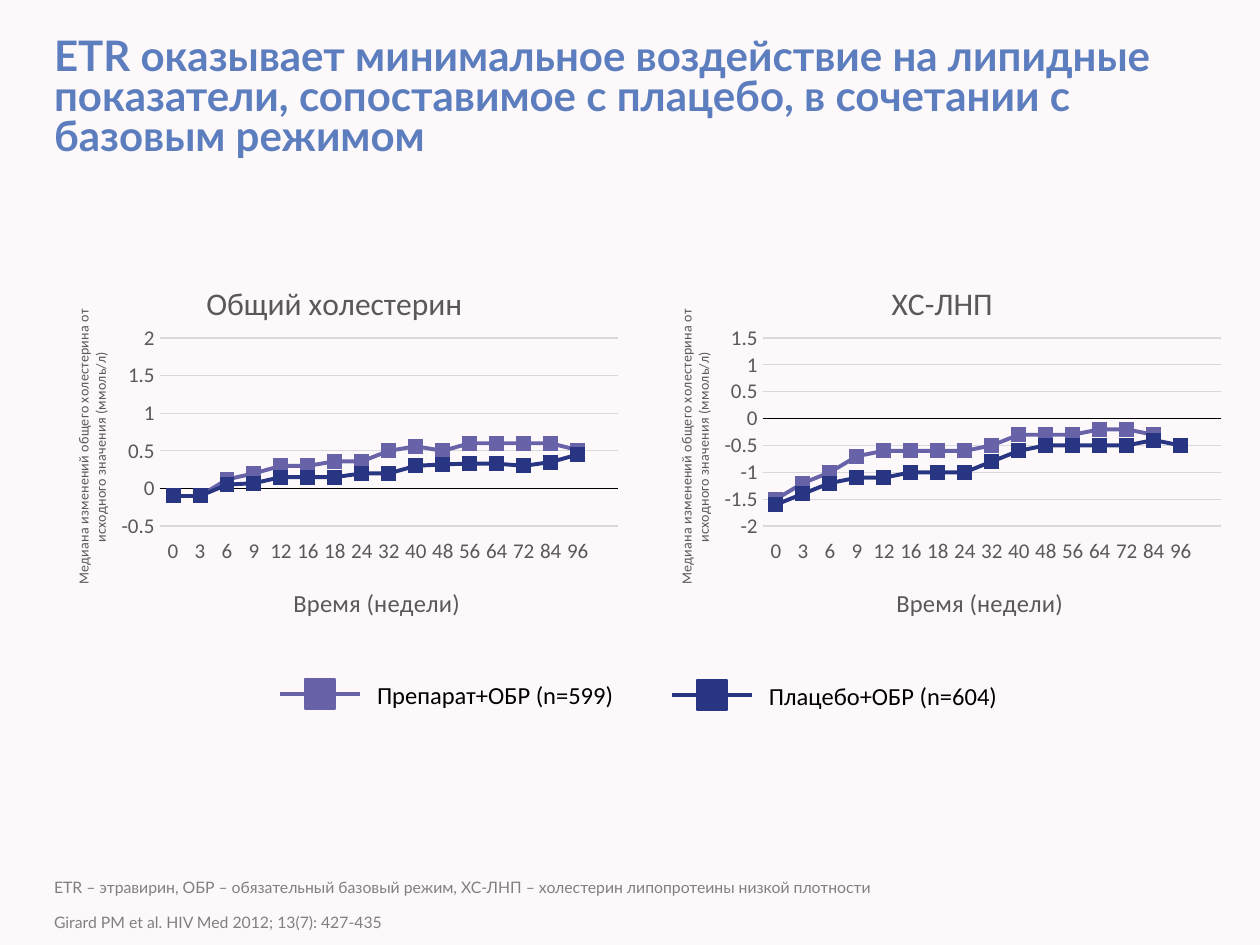
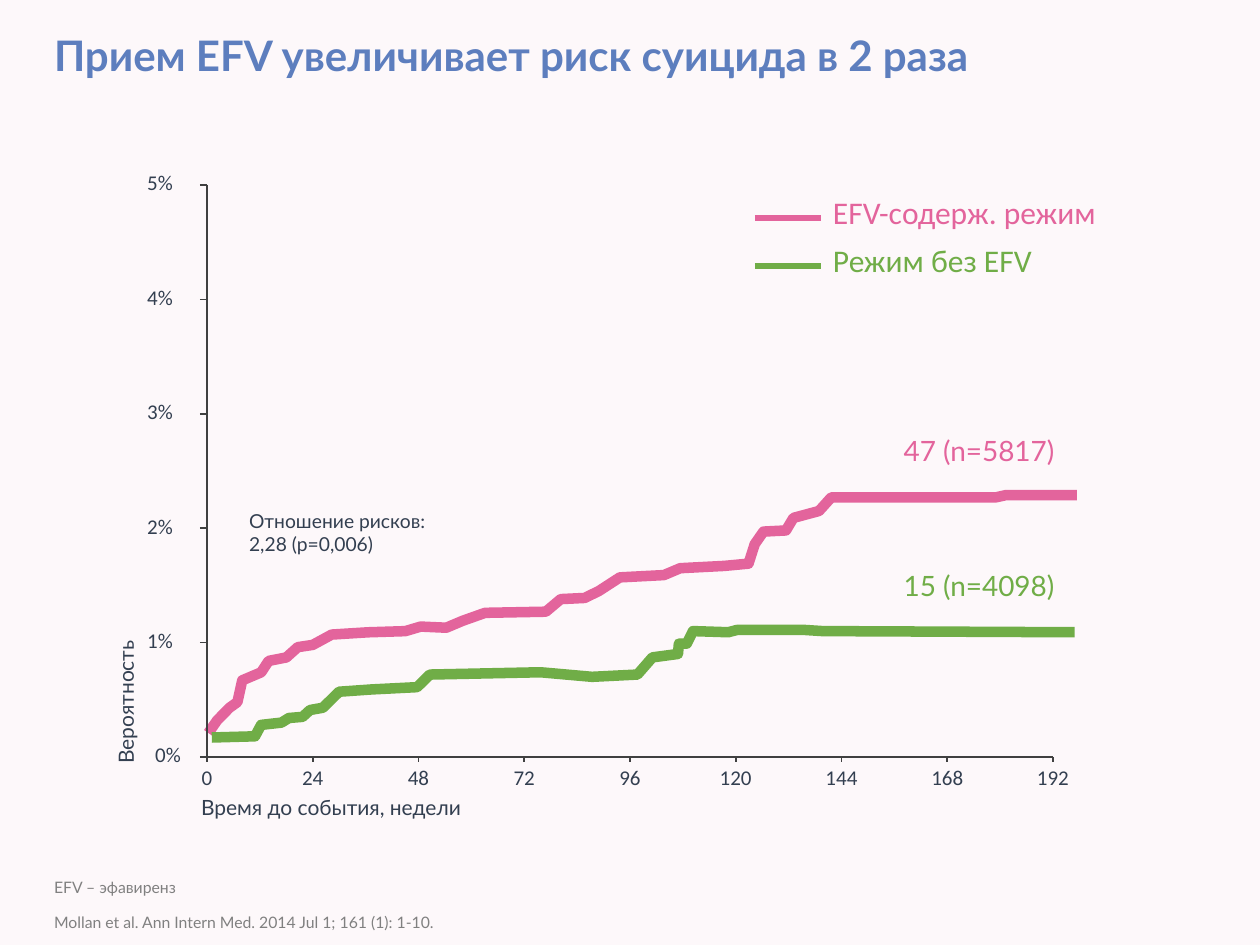
from lxml import etree
from pptx import Presentation
from pptx import util as u
from pptx.chart.data import CategoryChartData
from pptx.dml.color import RGBColor
from pptx.enum import chart as ch, shapes, text
from pptx.oxml.ns import qn

BACK, TITLE, GREY, DARK, BLACK = "FDF8FA", "5D7EBE", "808080", "595959", "000000"
DRUG, DUMMY, GRID = "6863A9", "283583", "D9D9D9"
PINK, GREEN, AXIS, INK = "E3649C", "70AD47", "404040", "333F50"
LATO, CALIBRI = "Lato", "Calibri"
LEFT, MID = text.PP_ALIGN.LEFT, text.PP_ALIGN.CENTER

WEEKS = "0 3 6 9 12 16 18 24 32 40 48 56 64 72 84 96".split() + [""]
TOTAL = (
    [-0.1, -0.1, 0.12, 0.2, 0.3, 0.3, 0.36, 0.36, 0.5, 0.56, 0.5, 0.6, 0.6, 0.6, 0.6, 0.51],
    [-0.1, -0.1, 0.05, 0.07, 0.15, 0.15, 0.15, 0.2, 0.2, 0.3, 0.32, 0.33, 0.33, 0.3, 0.35, 0.45],
)
LDL = (
    [-1.5, -1.2, -1, -0.7, -0.6, -0.6, -0.6, -0.6, -0.5, -0.3, -0.3, -0.3, -0.2, -0.2, -0.3],
    [-1.6, -1.4, -1.2, -1.1, -1.1, -1, -1, -1, -0.8, -0.6, -0.5, -0.5, -0.5, -0.5, -0.4, -0.5],
)
WITH_EFV = [
    (0.3, 0.21), (2.3, 0.32), (5.1, 0.43), (6.9, 0.48), (8, 0.67), (12.3, 0.74),
    (14, 0.84), (18, 0.87), (20.6, 0.96), (24, 0.98), (28.3, 1.07), (36.6, 1.09),
    (45, 1.1), (48.5, 1.14), (54.3, 1.13), (58, 1.19), (63.1, 1.26), (76.9, 1.27),
    (80.3, 1.38), (85.7, 1.39), (88.9, 1.45), (93.7, 1.57), (103.7, 1.59),
    (107.4, 1.65), (117.4, 1.67), (122.9, 1.69), (124.3, 1.86), (126.3, 1.97),
    (131.4, 1.98), (133.1, 2.09), (138.9, 2.15), (141.7, 2.27), (179.1, 2.27),
    (181.4, 2.29), (197.4, 2.29),
]
NO_EFV = [
    (1.1, 0.17), (10.9, 0.18), (12.3, 0.28), (16.9, 0.3), (18.6, 0.34), (21.7, 0.35),
    (23.4, 0.41), (26.3, 0.43), (30, 0.57), (37.4, 0.59), (47.7, 0.61), (50.6, 0.72),
    (75.7, 0.74), (87.4, 0.7), (97.7, 0.72), (101.1, 0.87), (106.9, 0.9), (107.1, 0.99),
    (108.9, 0.99), (110.3, 1.1), (118.3, 1.09), (120.3, 1.11), (135.7, 1.11),
    (139.7, 1.1), (196.9, 1.09),
]


def px(n):
    """Turn pixels into EMU."""
    return u.Emu(round(n * 914400 / 126))


def rgb(code):
    """Turn a hex string into a colour."""
    return RGBColor.from_string(code)


def style(font, size, color, name, bold=False):
    """Set the look of a font."""
    font.size, font.name, font.bold = u.Pt(size), name, bold
    font.color.rgb = rgb(color)


def stroke(line, color, width):
    """Set colour and width of a line."""
    line.color.rgb = rgb(color)
    line.width = u.Pt(width)


def frame(shape, anchor):
    """Strip the insets of a text frame and wrap it."""
    body = shape.text_frame
    body.margin_left = body.margin_right = body.margin_top = body.margin_bottom = 0
    body.word_wrap, body.vertical_anchor = True, anchor
    return body


def note(slide, box, words, size, color, name=CALIBRI, align=LEFT, anchor=text.MSO_ANCHOR.TOP):
    """Add a text box without insets."""
    shape = slide.shapes.add_textbox(*map(px, box))
    body = frame(shape, anchor)
    body.text = words
    for par in body.paragraphs:
        par.alignment = align
        style(par.font, size, color, name)
    return shape


def rule(slide, x, y, w, h, color, width):
    """Draw a straight line from a corner by a given reach."""
    line = slide.shapes.add_connector(
        shapes.MSO_CONNECTOR.STRAIGHT, px(x), px(y), px(x + w), px(y + h))
    stroke(line.line, color, width)
    etree.SubElement(line._element.spPr, qn("a:effectLst"))


def page(deck, title, foot):
    """Start a slide with its title and footnotes."""
    slide = deck.slides.add_slide(deck.slide_layouts[5])
    head = slide.shapes.title
    head.left, head.top, head.width, head.height = map(px, (54, 39, 1152, 142))
    body = frame(head, text.MSO_ANCHOR.TOP)
    body.auto_size = text.MSO_AUTO_SIZE.NONE
    body.text = title
    par = body.paragraphs[0]
    par.alignment, par.line_spacing = LEFT, 0.8
    style(par.font, 24, TITLE, LATO, True)
    base = note(slide, (54, 872, 1152, 60), foot, 9, GREY, LATO,
                anchor=text.MSO_ANCHOR.BOTTOM)
    for n, par in enumerate(base.text_frame.paragraphs):
        par.line_spacing, par.space_before = 0.9, u.Pt(10 if n else 0)
    return slide


def place(part, spot, **sides):
    """Give a chart part a fixed layout, in shares of the chart."""
    old = part.find(qn("c:layout"))
    if old is not None:
        part.remove(old)
    outer = etree.Element(qn("c:layout"))
    inner = etree.SubElement(outer, qn("c:manualLayout"))
    if "w" in sides:
        etree.SubElement(inner, qn("c:layoutTarget")).set("val", "inner")
    for side in "xy":
        etree.SubElement(inner, qn(f"c:{side}Mode")).set("val", "edge")
    for side, share in sides.items():
        etree.SubElement(inner, qn(f"c:{side}")).set("val", str(share))
    part.insert(spot, outer)


def label(owner, words, size, x, y):
    """Write the title of a chart or an axis at a given place."""
    owner.has_title = True
    title = getattr(owner, "chart_title", None) or owner.axis_title
    title.text_frame.text = words
    style(title.text_frame.paragraphs[0].font, size, DARK, CALIBRI)
    place(title._element, 1, x=x, y=y)


def trend(slide, box, title, shift, rows, low, high):
    """Add a line chart of lipid changes."""
    data = CategoryChartData()
    data.categories = WEEKS
    for n, row in enumerate(rows, 1):
        data.add_series(f"Series {n}", row + [None] * (len(WEEKS) - len(row)))
    chart = slide.shapes.add_chart(
        ch.XL_CHART_TYPE.LINE_MARKERS, *map(px, box), data).chart
    style(chart.font, 10, BLACK, CALIBRI)
    chart.has_legend = False
    label(chart, title, 18, shift, 0.08)
    cat, val = chart.category_axis, chart.value_axis
    label(cat, "Время (недели)", 14, 0.42, 0.86)
    label(val, "Медиана изменений общего холестерина от исходного значения (ммоль/л)",
          8, 0.05, 0.16)
    for axis in (cat, val):
        axis.major_tick_mark = axis.minor_tick_mark = ch.XL_TICK_MARK.NONE
        style(axis.tick_labels.font, 12, DARK, CALIBRI)
    cat.tick_label_position = ch.XL_TICK_LABEL_POSITION.LOW
    stroke(cat.format.line, BLACK, 0.75)
    val.format.line.fill.background()
    val.minimum_scale, val.maximum_scale, val.major_unit = low, high, 0.5
    val.has_major_gridlines = True
    stroke(val.major_gridlines.format.line, GRID, 0.75)
    if val._element.find(qn("c:crossBetween")) is None:
        cross = etree.Element(qn("c:crossBetween"), val="between")
        val._element.find(qn("c:crosses")).addnext(cross)
    plot = chart.plots[0]
    plot.vary_by_categories = False
    for row, color in zip(plot.series, (DRUG, DUMMY)):
        row.smooth = False
        stroke(row.format.line, color, 2.25)
        mark = row.marker
        mark.style, mark.size = ch.XL_MARKER_STYLE.SQUARE, 8
        mark.format.fill.solid()
        mark.format.fill.fore_color.rgb = rgb(color)
        stroke(mark.format.line, color, 0.75)
    place(chart._chartSpace.chart.plotArea, 0, x=0.2, y=0.24, w=0.78, h=0.48)


def key(slide, x, y, words, color):
    """Add a legend entry with a square on a line."""
    box = slide.shapes.add_shape(
        shapes.MSO_SHAPE.RECTANGLE, px(x + 25), px(y - 15), px(30), px(30))
    box.shadow.inherit = False
    box.fill.solid()
    box.fill.fore_color.rgb = rgb(color)
    stroke(box.line, color, 1)
    rule(slide, x, y, 80, 0, color, 2.25)
    note(slide, (x + 97, y - 14, 270, 30), words, 14, BLACK,
         anchor=text.MSO_ANCHOR.MIDDLE)


def axes(slide, box):
    """Draw both axes with ticks and labels."""
    x, y, w, h = box
    foot = y + h
    rule(slide, x, foot, w, 0, AXIS, 1)
    rule(slide, x, y, 0, h, AXIS, 1)
    for n in range(9):
        tick = x + w * n / 8
        rule(slide, tick, foot, 0, 5, AXIS, 1)
        note(slide, (tick - 30, foot + 8, 60, 30), str(24 * n), 12, INK, align=MID)
    for n in range(6):
        tick = foot - h * n / 5
        rule(slide, x - 7, tick, 7, 0, AXIS, 1)
        shift = 0 if n else 8
        note(slide, (x - 77 + shift, tick - 15, 60, 30), f"{n}%", 12, INK, align=MID)
    note(slide, (x - 6, foot + 38, 400, 28), "Время до события, недели", 12, INK, LATO)
    side = note(slide, (x - 230, foot - 69, 297, 28), "Вероятность", 12, INK, LATO,
                MID, text.MSO_ANCHOR.MIDDLE)
    side.rotation = 270


def curve(slide, box, points, color):
    """Draw a risk curve from weeks and percents."""
    x, y, w, h = box
    spots = [(px(x + w * week / 192), px(y + h - h * risk / 5)) for week, risk in points]
    pen = slide.shapes.build_freeform(*spots[0])
    pen.add_line_segments(spots[1:], close=False)
    line = pen.convert_to_shape()
    line.shadow.inherit = False
    line.fill.background()
    stroke(line.line, color, 6)


def lipids(deck):
    """Build the slide on lipid levels."""
    slide = page(
        deck,
        "ETR оказывает минимальное воздействие на липидные показатели, "
        "сопоставимое с плацебо, в сочетании с базовым режимом",
        "ETR – этравирин, ОБР – обязательный базовый режим, "
        "ХС-ЛНП – холестерин липопротеины низкой плотности\n"
        "Girard PM et al. HIV Med 2012; 13(7): 427-435")
    trend(slide, (42, 244, 588, 392), "Общий холестерин", 0.27, TOTAL, -0.5, 2)
    trend(slide, (645, 244, 588, 392), "ХС-ЛНП", 0.41, LDL, -2, 1.5)
    key(slide, 280, 694, "Препарат+ОБР (n=599)", DRUG)
    key(slide, 672, 695, "Плацебо+ОБР (n=604)", DUMMY)


def risk(deck):
    """Build the slide on suicide risk."""
    slide = page(
        deck, "Прием EFV увеличивает риск суицида в 2 раза",
        "EFV – эфавиренз\nMollan et al. Ann Intern Med. 2014 Jul 1; 161 (1): 1-10.")
    box = x, y, w, h = 207, 185, 846, 572
    arms = (
        (WITH_EFV, PINK, "EFV-содерж. режим", 33, "47 (n=5817)", 249),
        (NO_EFV, GREEN, "Режим без EFV", 81, "15 (n=4098)", 384),
    )
    for points, color, name, top, count, drop in arms:
        curve(slide, box, points, color)
        rule(slide, x + 548, y + top, 66, 0, color, 3)
        note(slide, (x + 626, y + top - 25, 400, 40), name, 18, color)
        note(slide, (x + 655, y + drop, 234, 36), count, 16, color, LATO, MID)
    axes(slide, box)
    note(slide, (x + 42, y + 324, 260, 56), "Отношение рисков:\v2,28 (р=0,006)",
         11, INK, LATO)


def main():
    """Build and save the deck."""
    deck = Presentation()
    deck.slide_width, deck.slide_height = px(1260), px(945)
    fill = deck.slide_master.background.fill
    fill.solid()
    fill.fore_color.rgb = rgb(BACK)
    lipids(deck)
    risk(deck)
    deck.save("out.pptx")


if __name__ == "__main__":
    main()
